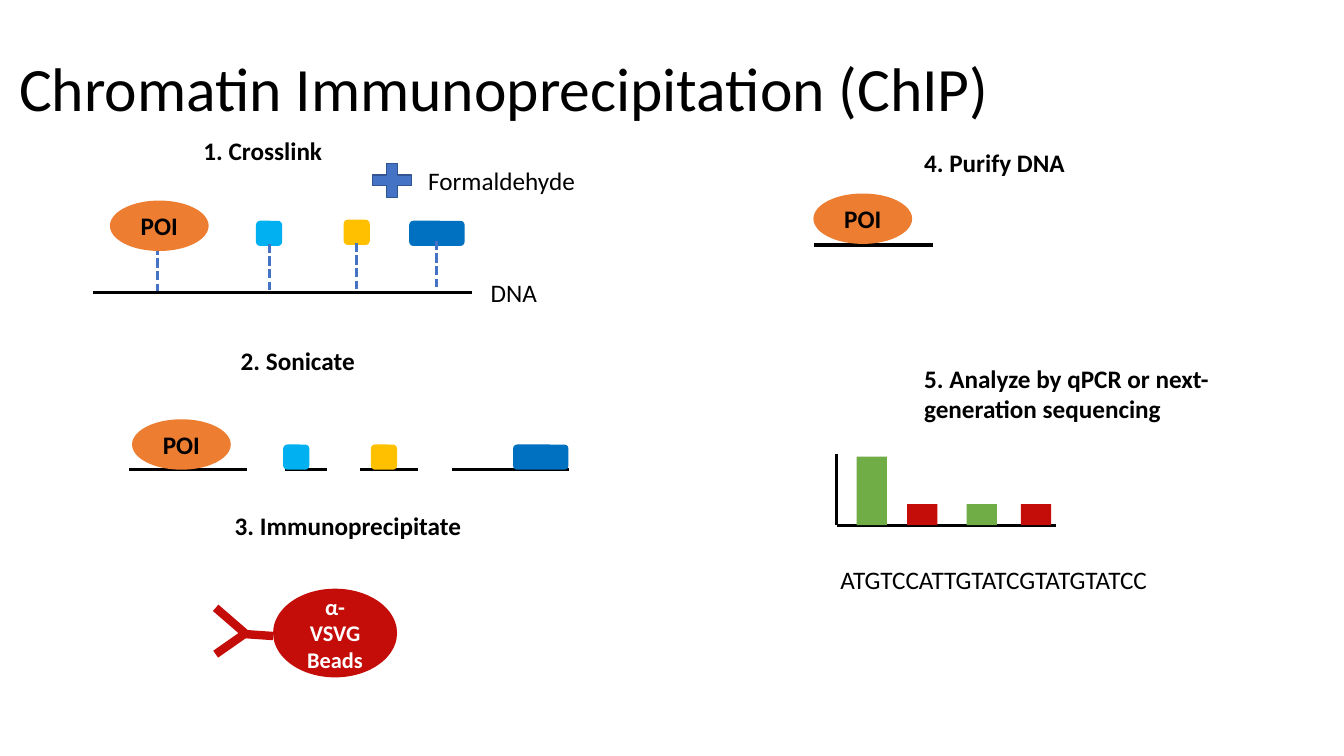
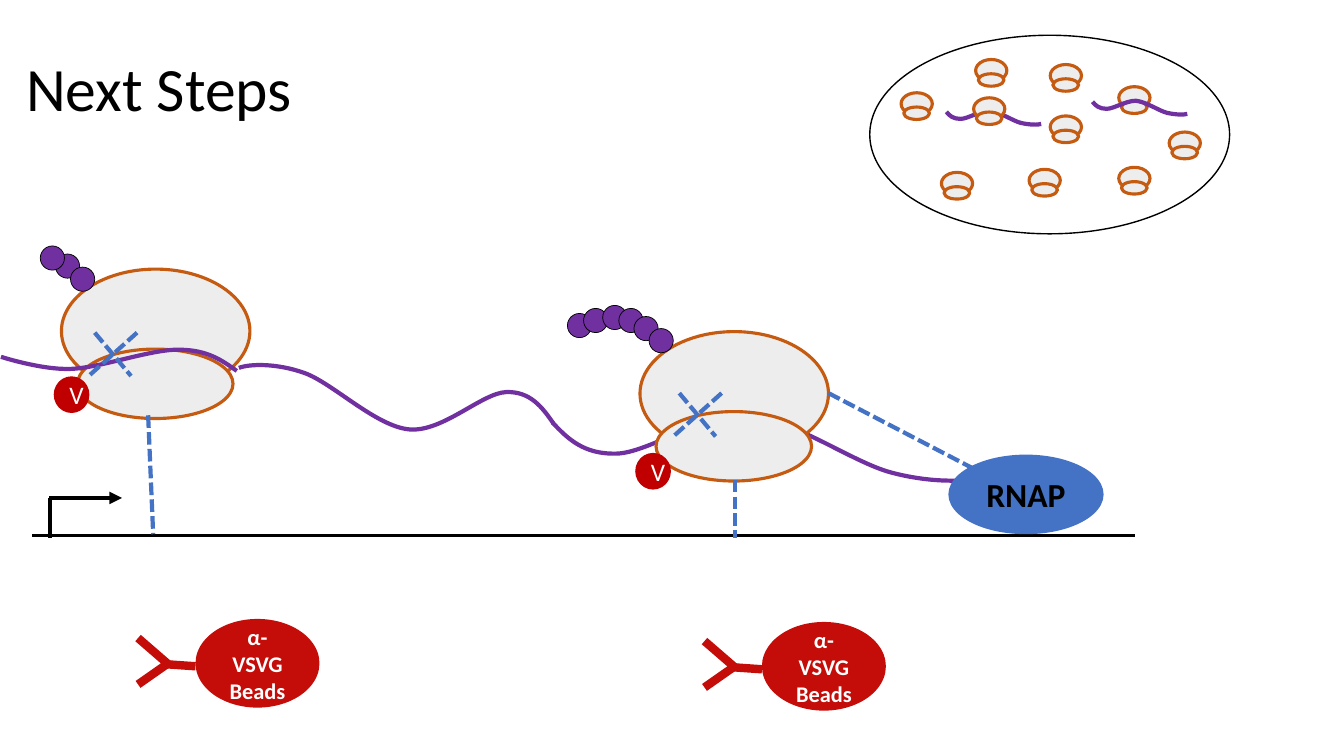
from lxml.etree import SubElement as Sub
from pptx import Presentation
from pptx.dml.color import RGBColor as Rgb
from pptx.enum.dml import MSO_LINE as Dash
from pptx.enum.shapes import MSO_CONNECTOR as Conn, MSO_SHAPE as Kind
from pptx.enum.text import (MSO_ANCHOR as Anchor, MSO_AUTO_SIZE as Auto,
                            PP_ALIGN as Align)
from pptx.oxml.ns import qn
from pptx.util import Cm, Pt

FONT = "Calibri"
BLACK, WHITE, BLUE, RED = "000000", "FFFFFF", "4472C4", "C40C08"
ORANGE, GREEN, PURPLE, TAG = "ED7D31", "70AD47", "7030A0", "C00000"
SHELL, RIM = "EDEDED", "C55A11"
SKY, GOLD, NAVY = "00B0F0", "FFC000", "0070C0"

# Places and sizes are in inches; size() turns them into lengths.
STEPS = [
    ("1. Crosslink", 1.92, 1.29, 1.46, 0.4),
    ("2. Sonicate", 2.29, 3.38, 1.46, 0.4),
    ("3. Immunoprecipitate", 2.23, 5.01, 2.68, 0.4),
    ("4. Purify DNA", 9.07, 1.41, 2.68, 0.4),
    ("5. Analyze by qPCR or next-generation sequencing", 9.07, 3.55, 3.05, 0.71),
]
LABELS = [
    ("DNA", 4.77, 2.7, 0.83, 0.4),
    ("ATGTCCATTGTATCGTATGTATCC", 8.24, 5.55, 3.31, 0.4),
]
# colour, width, left and top when crosslinked, left when sonicated
FACTORS = [
    (GOLD, 0.26, 3.41, 2.18, 3.68),
    (SKY, 0.26, 2.54, 2.19, 2.81),
    (NAVY, 0.55, 4.06, 2.19, 5.09),
]
TIES = [(2.67, 2.42), (3.54, 2.41), (4.33, 2.39)]
# left, right
PIECES = [(2.83, 3.24), (3.57, 4.15), (4.48, 5.65), (1.28, 2.45)]
CUT = 4.66
POIS = [(1.09, 1.99), (8.07, 1.92)]
BASE = 5.21
BARS = [(8.5, 0.68, GREEN), (9, 0.21, RED), (9.59, 0.21, GREEN),
        (10.13, 0.21, RED)]

# Curves: a start, then three points for each bend
EXIT = [(5.48, 4.19), (5.63, 4.35), (5.79, 4.51), (6.12, 4.5), (6.44, 4.49),
        (6.97, 4.1), (7.43, 4.13), (7.88, 4.16), (8.46, 4.59), (8.85, 4.69),
        (9.23, 4.79), (9.58, 4.78), (9.73, 4.74)]
MIDDLE = [(5.49, 4.2), (5.38, 4.04), (5.26, 3.88), (5.02, 3.89), (4.78, 3.9),
          (4.39, 4.29), (4.06, 4.26), (3.73, 4.23), (3.3, 3.8), (3.02, 3.7),
          (2.74, 3.6), (2.47, 3.61), (2.37, 3.65)]
ENTRY = [(2.35, 3.68), (2.21, 3.58), (2.06, 3.47), (1.78, 3.47), (1.51, 3.46),
         (1, 3.65), (0.7, 3.66), (0.41, 3.67), (0.01, 3.54), (0.01, 3.54)]
WAVE = [(0, 0.01), (0.03, 0.05), (0.07, 0.08), (0.14, 0.08), (0.21, 0.08),
        (0.33, 0), (0.43, 0), (0.53, 0.01), (0.66, 0.1), (0.74, 0.12),
        (0.83, 0.14), (0.91, 0.14), (0.94, 0.13)]
PEPTIDES = [(0.55, 2.52), (5.63, 3.11), (5.79, 3.06), (5.98, 3.03),
            (6.14, 3.06), (6.29, 3.14), (6.44, 3.26), (0.4, 2.44),
            (0.7, 2.65)]
RIBOS = [(0.61, 2.67), (6.35, 3.29)]
TAGS = [(0.54, 3.74), (6.31, 4.5)]
CROSSES = [(0.88, 3.3), (6.68, 3.9)]
LINKS = [((1.47, 4.12), (1.52, 5.3)), ((7.29, 4.76), (7.29, 5.34)),
         ((8.22, 3.9), (9.66, 4.65))]
MINIS = [(8.94, 0.92), (9.66, 0.97), (10.42, 0.64), (11.6, 1.31),
         (11.1, 1.66), (9.34, 1.71), (10.21, 1.68), (11.1, 0.86),
         (9.68, 0.59), (10.42, 1.15)]


def size(inches):
    return Cm(inches * 2.54)


def color(code):
    return Rgb.from_string(code)


def write(frame, text, pt=18, ink=BLACK, bold=False, align=Align.LEFT,
          anchor=Anchor.TOP, space=None):
    frame.word_wrap = True
    frame.vertical_anchor = anchor
    para = frame.paragraphs[0]
    para.alignment = align
    para.line_spacing = space
    run = para.add_run()
    run.text = text
    font = run.font
    font.name, font.size, font.bold = FONT, Pt(pt), bold
    font.color.rgb = color(ink)


def label(to, text, x, y, w, h, fit=Auto.SHAPE_TO_FIT_TEXT, **style):
    frame = to.add_textbox(*map(size, (x, y, w, h))).text_frame
    frame.auto_size = fit
    write(frame, text, **style)


def paint(item, fill=None, edge=None, width=1):
    item.shadow.inherit = False
    if fill:
        item.fill.solid()
        item.fill.fore_color.rgb = color(fill)
    else:
        item.fill.background()
    if edge:
        item.line.color.rgb = color(edge)
        item.line.width = Pt(width)
    else:
        item.line.fill.background()


def shape(to, kind, x, y, w, h, fill=None, edge=None, width=1, text="",
          **style):
    item = to.add_shape(kind, *map(size, (x, y, w, h)))
    paint(item, fill, edge, width)
    if text:
        write(item.text_frame, text, align=Align.CENTER,
              anchor=Anchor.MIDDLE, **style)


def line(to, start, end, ink=BLACK, width=2.25, dash=False, arrow=False):
    item = to.add_connector(Conn.STRAIGHT, *map(size, (*start, *end)))
    item.line.color.rgb = color(ink)
    item.line.width = Pt(width)
    if dash:
        item.line.dash_style = Dash.SQUARE_DOT
    props = item._element.spPr
    if arrow:
        Sub(props.find(qn("a:ln")), qn("a:tailEnd"), type="triangle")
    Sub(props, qn("a:effectLst"))


def curve(to, points, dx=0, dy=0):
    """Draw an open outline whose every three segments become one bend."""
    spots = [(size(x + dx), size(y + dy)) for x, y in points]
    pen = to.build_freeform(*spots[0])
    pen.add_line_segments(spots[1:], close=False)
    item = pen.convert_to_shape()
    paint(item, edge=PURPLE, width=3)
    track = next(item._element.iter(qn("a:path")))
    sides = track.findall(qn("a:lnTo"))
    for i in range(0, len(sides), 3):
        bend = Sub(track, qn("a:cubicBezTo"))
        for side in sides[i:i + 3]:
            bend.append(side[0])
            track.remove(side)


def bunch(to):
    return to.add_group_shape().shapes


def poi(to, x, y):
    shape(to, Kind.OVAL, x, y, 0.98, 0.5, ORANGE, text="POI", bold=True)


def factor(to, x, y, w, fill):
    shape(to, Kind.ROUNDED_RECTANGLE, x, y, w, 0.25, fill)


def beads(to, x, y):
    """Draw an antibody on a bead; x, y is the tip of its upper arm."""
    group = bunch(to)
    for a, b, c, d in [(0, 0, 0.3, 0.26), (0, 0.46, 0.3, 0.25),
                       (0.28, 0.26, 0.57, 0.28)]:
        line(group, (x + a, y + b), (x + c, y + d), RED, 6)
    shape(group, Kind.OVAL, x + 0.57, y - 0.19, 1.23, 0.88, RED,
          text="α-VSVG Beads", pt=16, ink=WHITE, bold=True)


def ribo(to, x, y, w, h):
    for part in [(x, y, w, h),
                 (x + 0.085 * w, y + 0.645 * h, 0.825 * w, 0.56 * h)]:
        shape(to, Kind.OVAL, *part, SHELL, RIM, 2.25)


def page(deck, title, x):
    to = deck.slides.add_slide(deck.slide_layouts[6]).shapes
    label(to, title, x, 0, 11.78, 1.81, fit=Auto.NONE, pt=44,
          anchor=Anchor.MIDDLE, space=0.9)
    return to


def chip(deck):
    to = page(deck, "Chromatin Immunoprecipitation (ChIP)", 0.09)
    line(to, (1.56, 2.44), (1.56, 2.9), BLUE, dash=True)
    line(to, (0.92, 2.9), (4.68, 2.9))
    agent = bunch(to)
    shape(agent, Kind.MATH_PLUS, 3.63, 1.56, 0.52, 0.46, BLUE, "325491")
    label(agent, "Formaldehyde", 4.15, 1.59, 1.71, 0.4)

    cut = bunch(to)
    for left, right in PIECES:
        line(cut, (left, CUT), (right, CUT))
    for fill, w, x, y, moved in FACTORS:
        factor(cut, moved, CUT - 0.25, w, fill)
        factor(to, x, y, w, fill)
    poi(cut, 1.31, 4.16)
    for x, y in TIES:
        line(to, (x, y), (x, y + 0.46), BLUE, dash=True)

    beads(to, 2.14, 6.03)
    line(to, (8.08, 2.43), (9.26, 2.43))
    for x, y in POIS:
        poi(to, x, y)
    graph = bunch(to)
    line(graph, (8.3, BASE), (10.48, BASE))
    line(graph, (8.3, BASE), (8.3, 4.5))
    for x, h, fill in BARS:
        shape(graph, Kind.RECTANGLE, x, BASE - h, 0.3, h, fill)
    for step in STEPS:
        label(to, *step, bold=True)
    for item in LABELS:
        label(to, *item)


def plan(deck):
    to = page(deck, "Next Steps", 0.16)
    for x, y in [(6.99, 6.36), (1.37, 6.33)]:
        beads(to, x, y)
    gene = bunch(to)
    curve(gene, EXIT)
    for x, y in RIBOS:
        ribo(gene, x, y, 1.87, 1.23)
    for x, y in PEPTIDES:
        shape(gene, Kind.OVAL, x, y, 0.24, 0.24, PURPLE, BLACK, 0.5)
    line(gene, (0.32, 5.31), (11.26, 5.31))
    shape(gene, Kind.OVAL, 9.41, 4.51, 1.54, 0.79, BLUE, text="RNAP", pt=24,
          bold=True)
    line(gene, (0.5, 4.94), (0.5, 5.34), width=3)
    line(gene, (0.49, 4.94), (1.21, 4.94), width=3, arrow=True)
    curve(gene, MIDDLE)
    for x, y in TAGS:
        shape(gene, Kind.OVAL, x, y, 0.34, 0.35, TAG, TAG, text="V",
              ink=WHITE)
    curve(gene, ENTRY)

    bonds = bunch(to)
    arms = [((x + a, y), (x + b, y + 0.43)) for x, y in CROSSES
            for a, b in [(0.06, 0.42), (0.48, 0)]]
    for start, end in arms + LINKS:
        line(bonds, start, end, BLUE, 3, dash=True)

    shape(to, Kind.OVAL, 8.63, 0.35, 3.57, 1.97, edge=BLACK)
    curve(to, WAVE, 9.39, 1.1)
    for x, y in MINIS:
        ribo(bunch(to), x, y, 0.31, 0.22)
    curve(to, WAVE, 10.84, 1)


def main():
    deck = Presentation()
    deck.slide_width, deck.slide_height = Cm(33.87), Cm(19.05)
    chip(deck)
    plan(deck)
    deck.save("out.pptx")


if __name__ == "__main__":
    main()
